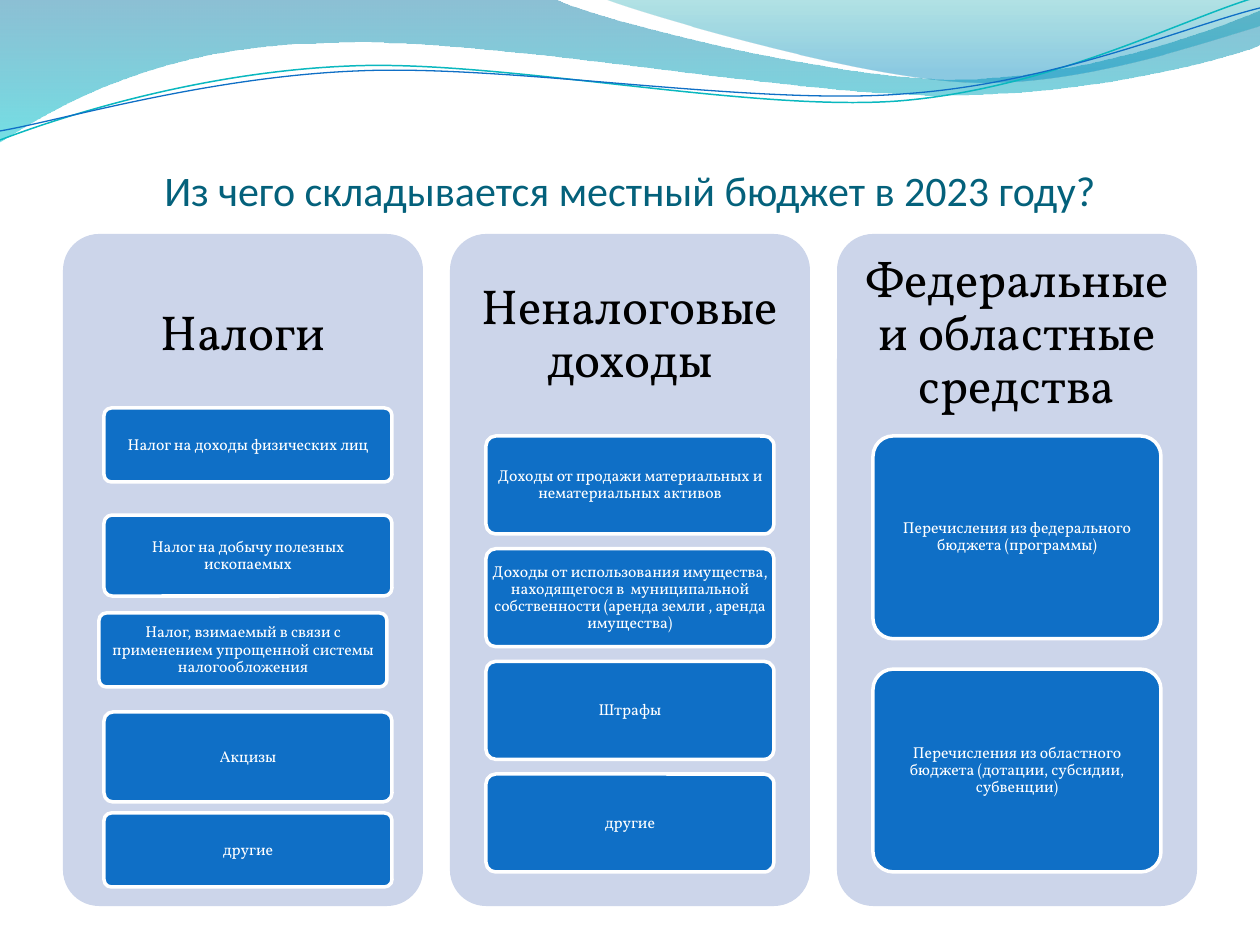
"""Build a slide showing the three sources of the local budget."""
from dataclasses import dataclass

from lxml.etree import SubElement
from pptx import Presentation
from pptx.dml.color import RGBColor
from pptx.enum.shapes import MSO_SHAPE as Shape
from pptx.enum.text import MSO_ANCHOR as Anchor, PP_ALIGN as Align
from pptx.oxml.ns import qn
from pptx.util import Emu, Pt

HEADLINE = "Из чего складывается местный бюджет в 2023 году?"
SOURCES = [
    ("Налоги", [
        "Налог на доходы физических лиц",
        "Налог на добычу полезных ископаемых",
        "Налог, взимаемый в связи с применением упрощенной системы налогообложения",
        "Акцизы",
        "другие",
    ]),
    ("Неналоговые доходы", [
        "Доходы от продажи материальных и нематериальных активов",
        "Доходы от использования имущества, находящегося в  муниципальной "
        "собственности (аренда земли , аренда имущества)",
        "Штрафы",
        "другие",
    ]),
    ("Федеральные и областные средства", [
        "Перечисления из федерального бюджета (программы)",
        "Перечисления из областного бюджета (дотации, субсидии, субвенции)",
    ]),
]
TAX_PLACES = [(41, 408, 74), (41, 515, 81), (36, 613, 74), (41, 712, 90), (41, 813, 74)]

WAVES = [
    ([(0, 0), (554, -1), (600, 21, 837, 79, 955, 79), (1075, 79, 1207, 33, 1260, 11),
      (1261, 45), (1239, 55, 1096, 96, 940, 95), (784, 95, 481, 35, 324, 43),
      (163, 45, 58, 105, -1, 142), (0, 0)],
     [(0, "0074A1", 45), (1, "00C6CF", 55)]),
    ([(604, -1), (641, 14, 859, 78, 969, 82), (1079, 87, 1211, 40, 1260, 26),
      (1260, 0), (604, -1)],
     [(0, "00A1A9", 30), (0.8, "008BBF", 45)]),
]
RIPPLES = [
    ([(0, 140), (60, 117, 199, 72, 349, 66), (498, 59, 747, 112, 898, 101),
      (1050, 89, 1182, 19, 1257, -3)], "0AB8BF", 0.85),
    ([(0, 131), (59, 121, 207, 77, 357, 71), (508, 64, 752, 106, 903, 94),
      (1053, 84, 1187, 26, 1260, 8)], "0F6FC6", 0.75),
]


@dataclass(frozen=True)
class Theme:
    """Colours, fonts and type sizes of the slide."""
    title: str = "04617B"
    panel: str = "CCD5EA"
    box: str = "0F6FC6"
    white: str = "FFFFFF"
    black: str = "000000"
    title_font: str = "Calibri"
    body_font: str = "Vollkorn"
    title_size: int = 24
    heading_size: int = 28
    item_size: int = 9


THEME = Theme()
SCALE = 914400 / 126
PANEL_LEFT, PANEL_TOP, PANEL_WIDTH, PANEL_HEIGHT, PANEL_PITCH = 63, 234, 360, 672, 387
HEADING_HEIGHT = 202
ITEM_LEFT, ITEM_TOP, ITEM_WIDTH, ITEM_SPAN = 36, 436, 288, 436
GAP_RATIO = 0.15


def px(length):
    """Turn px into EMU."""
    return Emu(round(length * SCALE))


def rgb(code):
    """Read a hex colour."""
    return RGBColor.from_string(code)


def write(holder, words, font, size, colour, insets, anchor=Anchor.MIDDLE, spacing=0.9):
    """Set and format the centred text of a shape."""
    frame = holder.text_frame
    frame.text = words
    frame.word_wrap = True
    frame.vertical_anchor = anchor
    (frame.margin_left, frame.margin_top,
     frame.margin_right, frame.margin_bottom) = map(px, insets)
    paragraph = frame.paragraphs[0]
    paragraph.alignment = Align.CENTER
    paragraph.line_spacing = spacing
    run_font = paragraph.runs[0].font
    run_font.name, run_font.size = font, Pt(size)
    run_font.color.rgb = rgb(colour)


def add_outline(slide, steps, close):
    """Add a freeform whose six-number steps are cubic curves."""
    points = [(px(step[i]), px(step[i + 1]))
              for step in steps for i in range(0, len(step), 2)]
    builder = slide.shapes.build_freeform(*points[0])
    builder.add_line_segments(points[1:], close=close)
    outline = builder.convert_to_shape()
    outline.shadow.inherit = False
    segments = iter(list(outline._element.iter(qn("a:lnTo"))))
    for step in steps[1:]:
        segment = next(segments)
        if len(step) == 6:
            segment.tag = qn("a:cubicBezTo")
            for _ in range(2):
                spare = next(segments)
                segment.append(spare[0])
                spare.getparent().remove(spare)
    return outline


def add_wave(slide, steps, stops):
    """Add a wave with a translucent vertical gradient."""
    wave = add_outline(slide, steps, True)
    wave.line.fill.background()
    wave.fill.gradient()
    wave.fill.gradient_angle = 270
    for stop, (position, colour, _) in zip(wave.fill.gradient_stops, stops):
        stop.position = position
        stop.color.rgb = rgb(colour)
    for node, (_, _, opacity) in zip(wave._element.spPr.iter(qn("a:srgbClr")), stops):
        SubElement(node, qn("a:alpha")).set("val", str(opacity * 1000))


def add_ripple(slide, steps, colour, width):
    """Add a thin curved line."""
    ripple = add_outline(slide, steps, False)
    ripple.fill.background()
    ripple.line.color.rgb = rgb(colour)
    ripple.line.width = Pt(width)


def add_card(slide, place, colour):
    """Add a borderless rounded rectangle."""
    card = slide.shapes.add_shape(Shape.ROUNDED_RECTANGLE, *map(px, place))
    card.adjustments[0] = 0.1
    card.shadow.inherit = False
    card.fill.solid()
    card.fill.fore_color.rgb = rgb(colour)
    card.line.fill.background()
    return card


def even_places(count):
    """Share the item area equally, with gaps in proportion to the height."""
    height = ITEM_SPAN / (count + GAP_RATIO * (count - 1))
    return [(ITEM_LEFT, ITEM_TOP + row * height * (1 + GAP_RATIO), height)
            for row in range(count)]


def add_source(slide, column, heading, items):
    """Add one panel with its heading and items."""
    left = PANEL_LEFT + column * PANEL_PITCH
    add_card(slide, (left, PANEL_TOP, PANEL_WIDTH, PANEL_HEIGHT), THEME.panel)
    caption = slide.shapes.add_textbox(
        *map(px, (left, PANEL_TOP, PANEL_WIDTH, HEADING_HEIGHT)))
    write(caption, heading, THEME.body_font, THEME.heading_size, THEME.black, [15] * 4)
    places = TAX_PLACES if column == 0 else even_places(len(items))
    for item, (offset, top, height) in zip(items, places):
        box = add_card(slide, (left + offset, top, ITEM_WIDTH, height), THEME.box)
        box.line.color.rgb = rgb(THEME.white)
        box.line.width = Pt(2)
        write(box, item, THEME.body_font, THEME.item_size, THEME.white, [2] * 4)


def main():
    """Assemble and save the slide."""
    deck = Presentation()
    deck.slide_width, deck.slide_height = px(1260), px(945)
    slide = deck.slides.add_slide(deck.slide_layouts[5])
    for steps, stops in WAVES:
        add_wave(slide, steps, stops)
    for steps, colour, width in RIPPLES:
        add_ripple(slide, steps, colour, width)
    title = slide.shapes.title
    title.left, title.top, title.width, title.height = map(px, (63, 105, 1134, 110))
    write(title, HEADLINE, THEME.title_font, THEME.title_size, THEME.title,
          (0, 6, 0, 0), Anchor.BOTTOM, 1.0)
    for column, (heading, items) in enumerate(SOURCES):
        add_source(slide, column, heading, items)
    deck.save("out.pptx")


if __name__ == "__main__":
    main()
